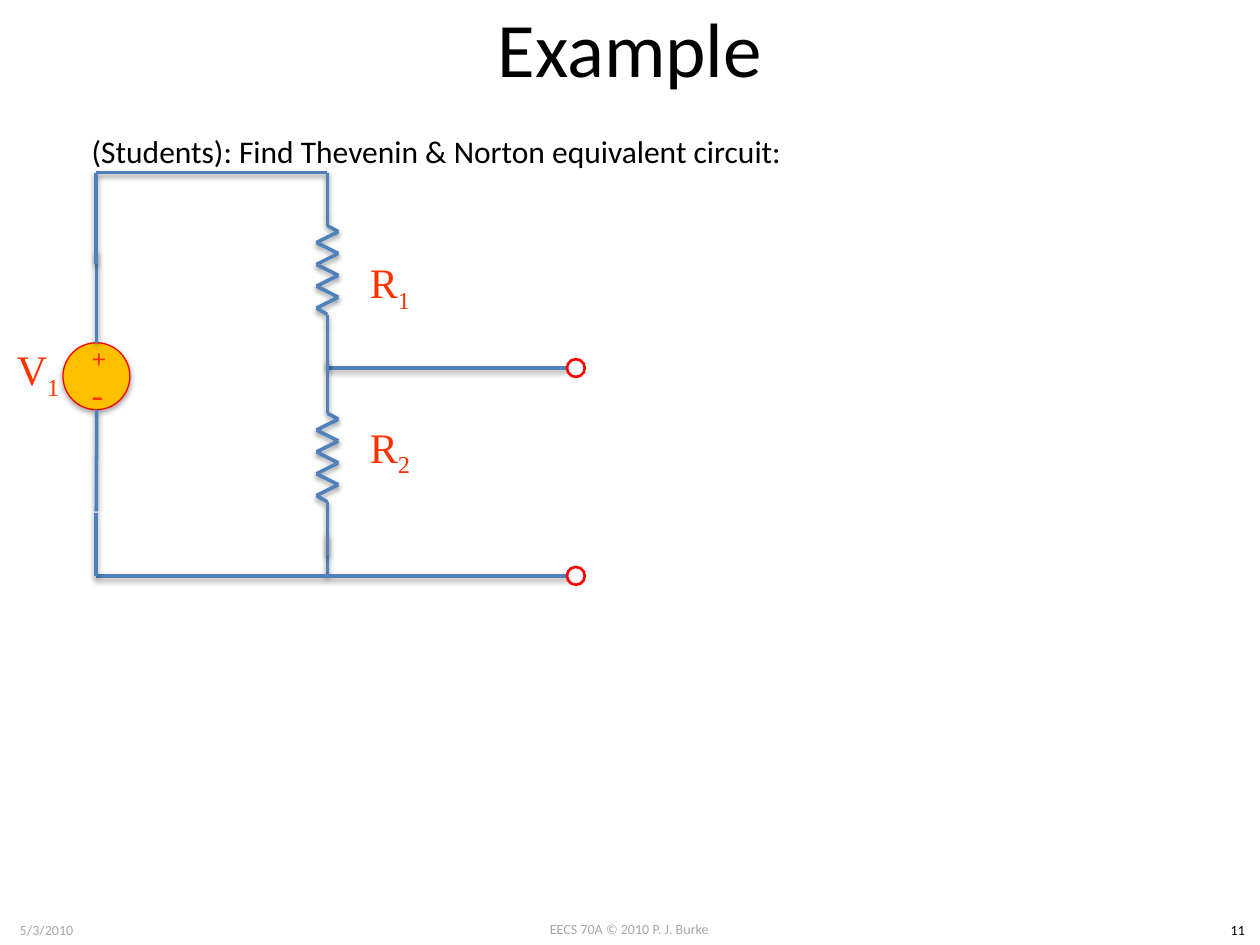
from itertools import pairwise
from lxml import etree
from pptx import Presentation
from pptx import util as u
from pptx.dml.color import RGBColor
from pptx.enum import shapes, text
from pptx.oxml import ns

Cm = u.Cm
COLORS = {"wire": "4F81BD", "label": "FF3300", "outline": "FF0000",
          "source": "FFC000", "ink": "000000", "footer": "A6A6A6"}

prs = Presentation()
prs.slide_width, prs.slide_height = Cm(25.4), Cm(19.05)
s = prs.slides.add_slide(prs.slide_layouts[6])


def add_text(txt, x, y, w, h, size, color="ink", font="Calibri", sub="",
             bold=False, align="CENTER", anchor="MIDDLE", wrap=True):
    tf = s.shapes.add_textbox(Cm(x), Cm(y), Cm(w), Cm(h)).text_frame
    tf.word_wrap = wrap
    tf.vertical_anchor = text.MSO_ANCHOR[anchor]
    p = tf.paragraphs[0]
    p.alignment = text.PP_ALIGN[align]
    for part in filter(None, (txt, sub)):
        r = p.add_run()
        r.text = part
        r.font.size, r.font.name, r.font.bold = u.Pt(size), font, bold
        r.font.color.rgb = RGBColor.from_string(COLORS[color])
    if sub:
        r.font._element.set("baseline", "-25000")


def add_shadow(sp, alpha):
    effects = etree.SubElement(sp._element.spPr, ns.qn("a:effectLst"))
    outer = etree.SubElement(effects, ns.qn("a:outerShdw"), blurRad="40000",
                             dist="21000", dir="5400000", rotWithShape="0")
    black = etree.SubElement(outer, ns.qn("a:srgbClr"), val=COLORS["ink"])
    etree.SubElement(black, ns.qn("a:alpha"), val=str(alpha * 1000))


for txt, x, y, w, color in [("EECS 70A © 2010 P. J. Burke", 9.73, 18.43, 5.92, "footer"),
                            ("5/3/2010", 0, 18.46, 1.88, "footer"),
                            ("11", 24.51, 18.46, 0.89, "ink")]:
    add_text(txt, x, y, w, 0.6, 8, color, anchor="TOP", wrap=False)
add_text("Example", 1.27, -0.64, 22.86, 3.18, 44)

left, mid, right = 1.94, 6.6, 11.43
top, tap, bottom = 3.48, 7.42, 11.61

sp = s.shapes.add_shape(shapes.MSO_SHAPE.OVAL, Cm(1.27), Cm(6.91), Cm(1.35), Cm(1.35))
sp.fill.solid()
sp.fill.fore_color.rgb = RGBColor.from_string(COLORS["source"])
sp.line.color.rgb = RGBColor.from_string(COLORS["outline"])
sp.line.width = u.Pt(0.75)
add_shadow(sp, 35)

wires = [((mid, 11.61), (mid, 10.77)),
         ((left, 10.31), (1.95, 8.26)),
         ((1.95, 6.91), (1.95, 5.05)),
         ((mid, top), (left, top)),
         ((left, 5.33), (left, top)),
         ((right, bottom), (left, bottom)),
         ((left, 10.34), (left, bottom)),
         ((right, tap), (mid, tap))]
zigzag = [(0.22 * (-1) ** k, 1.19 + 0.22 * k) for k in range(8)]
resistor = [(0, 0), (0, 0.84), (0, 1.07), *zigzag, (0, 2.86), (0, 3.07), (0, 3.94)]
for start in (top, 7.26):
    wires += pairwise((mid + dx, start + dy) for dx, dy in resistor)

for (x1, y1), (x2, y2) in wires:
    wire = s.shapes.add_connector(shapes.MSO_CONNECTOR.STRAIGHT,
                                  Cm(x1), Cm(y1), Cm(x2), Cm(y2))
    wire.line.color.rgb = RGBColor.from_string(COLORS["wire"])
    wire.line.width = u.Pt(2)
    add_shadow(wire, 38)

for y in (tap, bottom):
    sp = s.shapes.add_shape(shapes.MSO_SHAPE.OVAL, Cm(right), Cm(y - 0.18), Cm(0.36), Cm(0.36))
    sp.shadow.inherit = False
    sp.fill.background()
    sp.line.color.rgb = RGBColor.from_string(COLORS["outline"])
    sp.line.width = u.Pt(1.5)

for txt, sub, x, y in [("R", "2", 6.35, 8.15), ("R", "1", 6.35, 4.83), ("V", "1", -0.74, 6.58)]:
    add_text(txt, x, y, 3.02, 1.85, 24, "label", "Times New Roman", sub)
for sign, y, size in [("+", 6.81, 14.8), ("-", 7.52, 20)]:
    add_text(sign, 1.6, y, 0.66, 0.84, size, "label", "Times New Roman",
             bold=sign == "+", wrap=False)

add_text("(Students): Find Thevenin & Norton equivalent circuit:", 1.6, 2.54, 14.58, 1.02, 18,
         align="LEFT", anchor="TOP", wrap=False)

prs.save("out.pptx")
